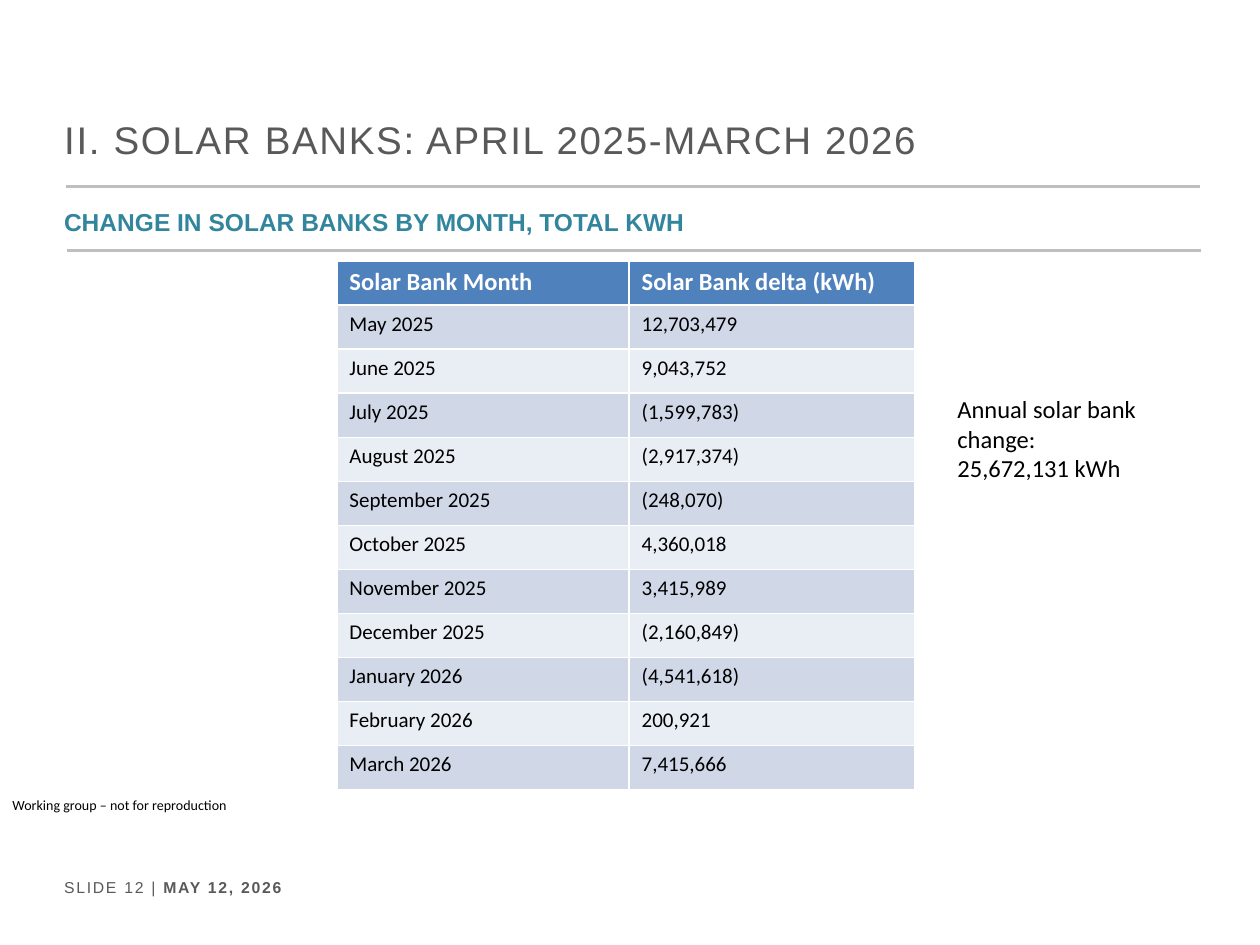
from pptx import Presentation
from pptx.dml.color import RGBColor
from pptx.enum.shapes import MSO_CONNECTOR as Connector
from pptx.enum.text import MSO_ANCHOR as Anchor, MSO_AUTO_SIZE as Fit, PP_ALIGN as Align
from pptx.oxml.ns import qn
from pptx.util import Pt
from lxml.etree import SubElement

MONTHS = [
    ("May 2025", "12,703,479"),
    ("June 2025", "9,043,752"),
    ("July 2025", "(1,599,783)"),
    ("August 2025", "(2,917,374)"),
    ("September 2025", "(248,070)"),
    ("October 2025", "4,360,018"),
    ("November 2025", "3,415,989"),
    ("December 2025", "(2,160,849)"),
    ("January 2026", "(4,541,618)"),
    ("February 2026", "200,921"),
    ("March 2026", "7,415,666"),
]
HEADER = ("Solar Bank Month", "Solar Bank delta (kWh)")


def color(value):
    return RGBColor.from_string(value)


class SlideBuilder:
    GREY, RULE, TEAL = "595959", "BFBFBF", "31859C"
    BLACK, WHITE, BLUE = "000000", "FFFFFF", "4F81BD"
    BANDS = ("D0D8E8", "E9EDF4")
    HEADING, BODY = "Arial", "Calibri"

    def __init__(self, page):
        self.page = page

    def add_span(self, para, text, ink, spacing=0, **formats):
        span = para.add_run()
        span.text = text
        for name, value in formats.items():
            setattr(span.font, name, value)
        span.font.color.rgb = color(ink)
        if spacing:
            span.font._element.set("spc", str(spacing * 100))

    def frame(self, box, anchor, fit=Fit.NONE):
        settings = {"word_wrap": True, "auto_size": fit, "vertical_anchor": anchor}
        for name, value in settings.items():
            setattr(box.text_frame, name, value)
        return box.text_frame

    def title(self, text, left, top, width, height):
        box = self.page.shapes.title
        places = {"left": left, "top": top, "width": width, "height": height}
        for name, value in places.items():
            setattr(box, name, Pt(value))
        para = self.frame(box, Anchor.MIDDLE).paragraphs[0]
        para.alignment = Align.LEFT
        self.add_span(para, text, self.GREY, 1, name=self.HEADING, size=Pt(22))

    def text(self, lines, left, top, width, height, anchor=Anchor.TOP,
             fit=Fit.SHAPE_TO_FIT_TEXT, line_spacing=None):
        """Each line is a list of (text, ink, formats) spans."""
        box = self.page.shapes.add_textbox(*map(Pt, (left, top, width, height)))
        frame = self.frame(box, anchor, fit)
        for index, spans in enumerate(lines):
            para = frame.add_paragraph() if index else frame.paragraphs[0]
            para.line_spacing = line_spacing
            for text, ink, formats in spans:
                self.add_span(para, text, ink, **formats)

    def rule(self, left, top, width):
        line = self.page.shapes.add_connector(
            Connector.STRAIGHT, Pt(left), Pt(top), Pt(left + width), Pt(top))
        line.line.color.rgb = color(self.RULE)
        line.line.width = Pt(1.5)
        SubElement(line._element.spPr, qn("a:effectLst"))

    def table(self, rows, left, top, widths, row_height):
        table = self.page.shapes.add_table(
            len(rows), len(widths), Pt(left), Pt(top),
            Pt(sum(widths)), Pt(row_height * len(rows))).table
        for column, width in zip(table.columns, widths):
            column.width = Pt(width)
        for r, values in enumerate(rows):
            header = r == 0
            for c, value in enumerate(values):
                cell = table.cell(r, c)
                cell.fill.solid()
                cell.fill.fore_color.rgb = color(
                    self.BLUE if header else self.BANDS[(r - 1) % 2])
                self.add_span(cell.text_frame.paragraphs[0], value,
                              self.WHITE if header else self.BLACK,
                              name=self.BODY, size=Pt(14 if header else 12), bold=header)


def main():
    deck = Presentation()
    deck.slide_width, deck.slide_height = Pt(720), Pt(540)
    page = deck.slides.add_slide(deck.slide_layouts[5])
    slide = SlideBuilder(page)

    # Rules under the headings
    slide.rule(37.7, 106.6, 648)
    slide.rule(38.2, 143.3, 648)

    # Footer
    footer = {"name": slide.HEADING, "size": Pt(9), "spacing": 1}
    slide.text([[("SLIDE 12 | ", slide.GREY, footer),
                 ("MAY 12, 2026", slide.GREY, {**footer, "bold": True})]],
               29.5, 498.2, 193, 18)

    # Headings
    slide.title("II. SOLAR BANKS: APRIL 2025-MARCH 2026", 29.5, 58.3, 656, 41.8)
    subtitle = {"name": slide.HEADING, "size": Pt(14), "bold": True}
    slide.text([[("CHANGE IN SOLAR BANKS BY MONTH, TOTAL KWH", slide.TEAL, subtitle)]],
               29.5, 108, 655, 33.8, Anchor.MIDDLE, Fit.NONE, 1.2)

    # Monthly changes
    slide.table([HEADER, *MONTHS], 192.5, 149.2, (167, 163.4), 25.2)

    # Notes beside and below the table
    small = {"name": slide.BODY, "size": Pt(8)}
    slide.text([[("Working group – not for reproduction", slide.BLACK, small)]],
               0, 451.4, 138.2, 17)
    large = {"name": slide.BODY, "size": Pt(14)}
    slide.text([[("Annual solar bank change:", slide.BLACK, large)],
                [("25,672,131 kWh", slide.BLACK, large)]],
               540, 221.8, 146, 58.3)

    deck.save("out.pptx")


if __name__ == "__main__":
    main()
